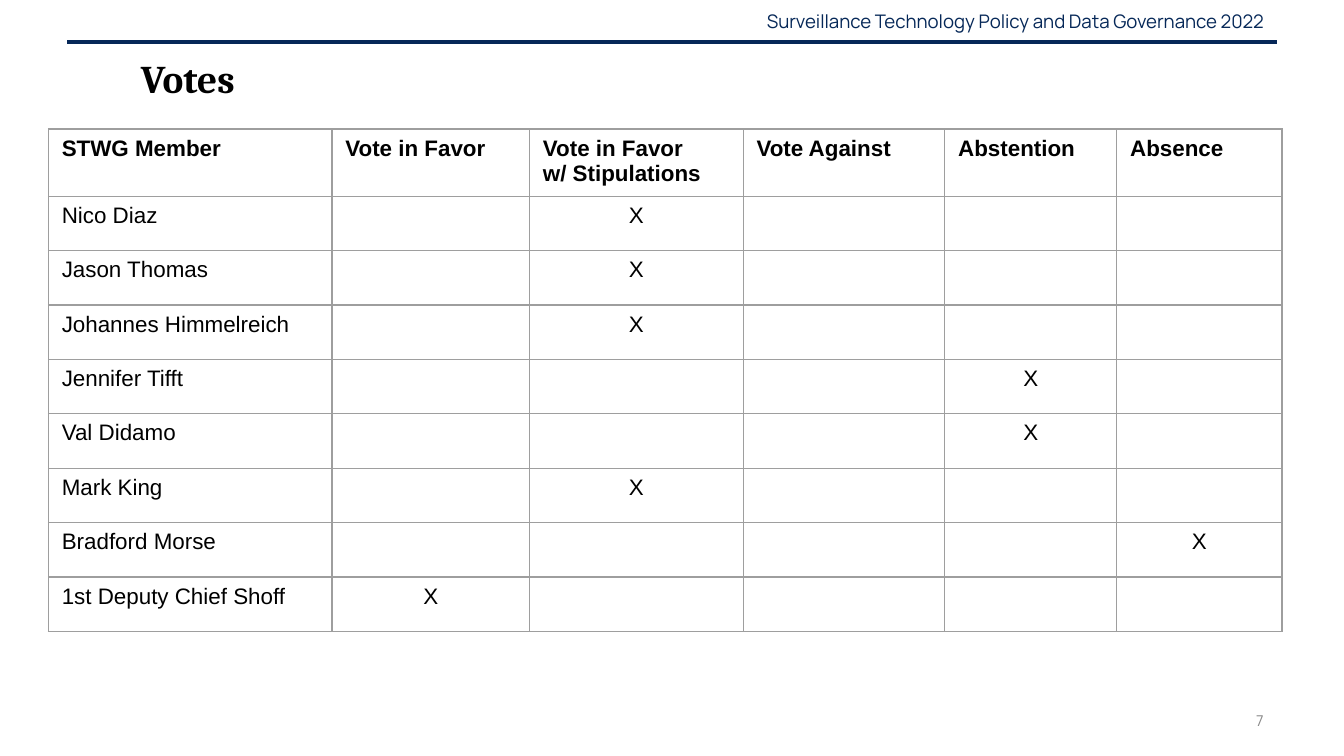
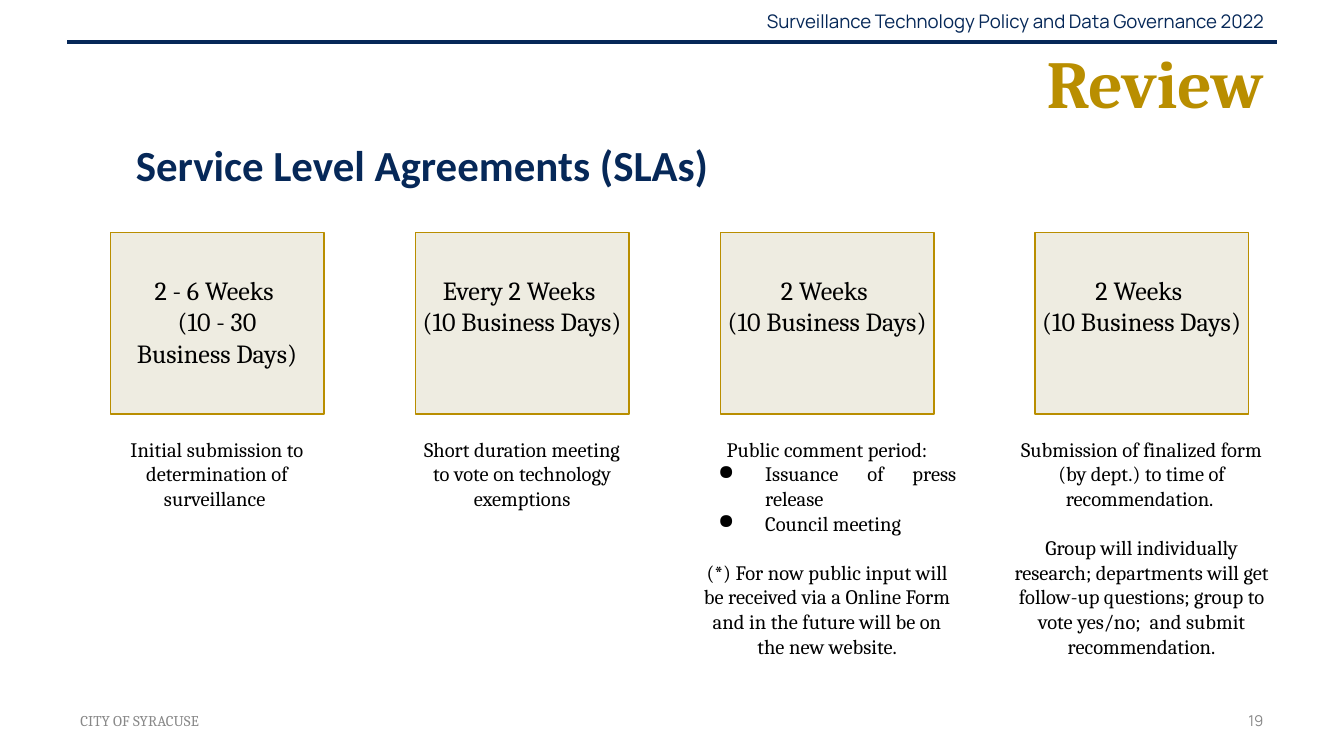
from dataclasses import dataclass
from typing import Optional, Sequence, Union

from lxml.etree import SubElement
from pptx import Presentation
from pptx.dml.color import RGBColor
from pptx.enum.shapes import MSO_CONNECTOR, MSO_SHAPE
from pptx.enum.text import MSO_ANCHOR, PP_ALIGN
from pptx.oxml import parse_xml
from pptx.oxml.ns import nsdecls, qn
from pptx.slide import Slide
from pptx.table import _Cell
from pptx.text.text import TextFrame, _Paragraph
from pptx.util import Inches, Length, Pt


@dataclass(frozen=True)
class Theme:
    navy: str = "062858"
    gold: str = "B98E00"
    cream: str = "EEECE1"
    black: str = "000000"
    gray: str = "888888"
    grid: str = "9E9E9E"
    serif: str = "Cambria"
    sans: str = "Calibri"
    band_font: str = "Manrope"
    table_font: str = "Arial"
    title_size: float = 36
    subtitle_size: float = 23
    heading_size: float = 21
    duration_size: float = 14
    table_size: float = 12
    caption_size: float = 11
    band_size: float = 10
    footer_size: float = 8
    rule_width: float = 2.25
    thin_width: float = 0.75


@dataclass(frozen=True)
class Area:
    left: float
    top: float
    width: float
    height: float

    def lengths(self) -> tuple[Length, ...]:
        return tuple(Inches(value) for value in (self.left, self.top, self.width, self.height))


@dataclass(frozen=True)
class Line:
    """A paragraph that is bulleted or set apart from the one above."""
    text: str
    bullet: bool = False
    space_before: float = 0


@dataclass(frozen=True)
class Member:
    name: str
    vote: str


@dataclass(frozen=True)
class Stage:
    left: float
    duration: Sequence[str]
    caption: Sequence[Union[str, Line]]
    caption_area: tuple[float, float]


THEME = Theme()
STAGE_SIZE = (1.59, 1.35)
NARROW, WIDE = (1.72, 0.76), (2.12, 1.87)
TEN_DAYS = "(10 Business Days)"
FAVOR, STIPULATIONS = "Vote in Favor", "Vote in Favor \vw/ Stipulations"
AGAINST, ABSTENTION, ABSENCE = "Vote Against", "Abstention", "Absence"

COLUMNS = {
    "STWG Member": 2.11,
    FAVOR: 1.47,
    STIPULATIONS: 1.59,
    AGAINST: 1.5,
    ABSTENTION: 1.28,
    ABSENCE: 1.23,
}

MEMBERS = (
    Member("Nico Diaz", STIPULATIONS),
    Member("Jason Thomas", STIPULATIONS),
    Member("Johannes Himmelreich", STIPULATIONS),
    Member("Jennifer Tifft", ABSTENTION),
    Member("Val Didamo", ABSTENTION),
    Member("Mark King ", STIPULATIONS),
    Member("Bradford Morse", ABSENCE),
    Member("1st Deputy Chief Shoff", FAVOR),
)

STAGES = (
    Stage(0.82, ("2 - 6 Weeks ", "(10 - 30", "Business Days)"),
          ("Initial submission to determination of surveillance ",), NARROW),
    Stage(3.09, ("Every 2 Weeks ", TEN_DAYS),
          ("Short duration meeting to vote on technology exemptions",), NARROW),
    Stage(5.36, ("2 Weeks ", TEN_DAYS),
          ("Public comment period:",
           Line("Issuance of press release ", bullet=True),
           Line("Council meeting", bullet=True),
           Line("(*) For now public input will be received via a Online Form and "
                "in the future will be on the new website.", space_before=13)), WIDE),
    Stage(7.7, ("2 Weeks ", TEN_DAYS),
          ("Submission of finalized form (by dept.) to time of recommendation. ",
           Line("Group will individually research; departments will get follow-up "
                "questions; group to vote yes/no;  and submit recommendation.",
                space_before=13)), WIDE),
)


def add_bullet(para: _Paragraph, size: float, color: str) -> None:
    para.alignment = PP_ALIGN.JUSTIFY
    properties = para._p.get_or_add_pPr()
    properties.set("marL", str(Inches(0.5)))
    properties.set("indent", str(Inches(-0.35)))
    SubElement(SubElement(properties, qn("a:buClr")), qn("a:srgbClr")).set("val", color)
    SubElement(properties, qn("a:buSzPts")).set("val", str(round(size * 100)))
    SubElement(properties, qn("a:buChar")).set("char", "●")


def write_text(frame: TextFrame, lines: Sequence[Union[str, Line]], *, font: str,
               size: float, color: str = THEME.black, bold: bool = False,
               align: PP_ALIGN = PP_ALIGN.LEFT, space_before: float = 0,
               line_spacing: Optional[float] = None) -> None:
    for index, item in enumerate(lines):
        line = item if isinstance(item, Line) else Line(item, space_before=space_before)
        para = frame.add_paragraph() if index else frame.paragraphs[0]
        para.text = line.text
        para.alignment = align
        para.space_before = Pt(line.space_before)
        if line_spacing:
            para.line_spacing = line_spacing
        if line.bullet:
            add_bullet(para, size, color)
        for line_break in para._p.findall(qn("a:br")):
            SubElement(line_break, qn("a:rPr")).set("sz", str(round(size * 100)))
        for span in para.runs:
            span.font.name = font
            span.font.size = Pt(size)
            span.font.bold = bold
            span.font.color.rgb = RGBColor.from_string(color)


def add_text_box(page: Slide, area: Area, *lines: Union[str, Line],
                 anchor: MSO_ANCHOR = MSO_ANCHOR.TOP, inset: float = 0.05,
                 **text_format) -> None:
    """Place wrapped text; inset is the margin above and below it."""
    frame = page.shapes.add_textbox(*area.lengths()).text_frame
    frame.word_wrap = True
    frame.vertical_anchor = anchor
    frame.margin_left = frame.margin_right = Inches(0.1)
    frame.margin_top = frame.margin_bottom = Inches(inset)
    write_text(frame, lines, **text_format)


def add_page(deck: Presentation, number: int) -> Slide:
    """Add a page with the header band and its page number."""
    page = deck.slides.add_slide(deck.slide_layouts[6])
    add_text_box(page, Area(5.21, 0.01, 4.29, 0.3),
                 "Surveillance Technology Policy and Data Governance 2022",
                 anchor=MSO_ANCHOR.MIDDLE, font=THEME.band_font, size=THEME.band_size,
                 color=THEME.navy, align=PP_ALIGN.RIGHT)
    add_text_box(page, Area(7.17, 5.21, 2.33, 0.3), str(number),
                 anchor=MSO_ANCHOR.MIDDLE, font=THEME.band_font, size=THEME.footer_size,
                 color=THEME.gray, align=PP_ALIGN.RIGHT)
    rule = page.shapes.add_connector(MSO_CONNECTOR.STRAIGHT, Inches(0.5), Inches(0.31),
                                     Inches(9.5), Inches(0.31))
    rule.line.color.rgb = RGBColor.from_string(THEME.navy)
    rule.line.width = Pt(THEME.rule_width)
    SubElement(rule._element.spPr, qn("a:effectLst"))
    return page


def style_cell(cell: _Cell) -> None:
    """Clear the fill and draw a thin border on every side."""
    cell.fill.background()
    properties = cell._tc.get_or_add_tcPr()
    for index, side in enumerate(("lnL", "lnR", "lnT", "lnB")):
        properties.insert(index, parse_xml(
            f'<a:{side} {nsdecls("a")} w="{Pt(THEME.thin_width)}"><a:solidFill>'
            f'<a:srgbClr val="{THEME.grid}"/></a:solidFill></a:{side}>'))


def add_vote_table(page: Slide) -> None:
    header_height, body_height = 0.48, 3.24
    area = Area(0.36, 0.96, sum(COLUMNS.values()), header_height + body_height)
    table = page.shapes.add_table(len(MEMBERS) + 1, len(COLUMNS), *area.lengths()).table
    table.first_row = table.horz_banding = False
    for column, width in zip(table.columns, COLUMNS.values()):
        column.width = Inches(width)
    for index, row in enumerate(table.rows):
        row.height = Inches(body_height / len(MEMBERS) if index else header_height)
    rows = [list(COLUMNS)] + [
        [member.name] + ["X" if vote == member.vote else "" for vote in list(COLUMNS)[1:]]
        for member in MEMBERS]
    for row_index, texts in enumerate(rows):
        for column_index, text in enumerate(texts):
            cell = table.cell(row_index, column_index)
            style_cell(cell)
            is_mark = row_index > 0 and column_index > 0
            write_text(cell.text_frame, [text], font=THEME.table_font,
                       size=THEME.table_size, bold=row_index == 0,
                       align=PP_ALIGN.CENTER if is_mark else PP_ALIGN.LEFT)


def add_stage(page: Slide, stage: Stage) -> None:
    width, height = STAGE_SIZE
    center = stage.left + width / 2
    box = page.shapes.add_shape(MSO_SHAPE.RECTANGLE,
                                *Area(stage.left, 1.73, width, height).lengths())
    box.shadow.inherit = False
    box.fill.solid()
    box.fill.fore_color.rgb = RGBColor.from_string(THEME.cream)
    box.line.color.rgb = RGBColor.from_string(THEME.gold)
    box.line.width = Pt(THEME.thin_width)
    duration_height = 0.2 + 0.24 * len(stage.duration)
    add_text_box(page, Area(center - NARROW[0] / 2, 1.94, NARROW[0], duration_height),
                 *stage.duration, inset=0.1, font=THEME.serif, size=THEME.duration_size,
                 align=PP_ALIGN.CENTER)
    caption_width, caption_height = stage.caption_area
    add_text_box(page, Area(center - caption_width / 2, 3.15, caption_width, caption_height),
                 *stage.caption, inset=0.1, font=THEME.serif, size=THEME.caption_size,
                 align=PP_ALIGN.CENTER)


def build_votes(deck: Presentation) -> None:
    page = add_page(deck, 7)
    add_text_box(page, Area(0.95, 0.3, 1.44, 0.88), "Votes", font=THEME.serif,
                 size=THEME.heading_size, bold=True, space_before=12, line_spacing=1.15)
    add_vote_table(page)


def build_review(deck: Presentation) -> None:
    page = add_page(deck, 19)
    add_text_box(page, Area(0.5, 5.21, 2.33, 0.3), "CITY OF SYRACUSE",
                 anchor=MSO_ANCHOR.MIDDLE, font=THEME.serif, size=THEME.footer_size,
                 color=THEME.gray)
    add_text_box(page, Area(0.73, 0.93, 4.83, 0.67), "Service Level Agreements (SLAs)",
                 inset=0.1, font=THEME.sans, size=THEME.subtitle_size, color=THEME.navy,
                 bold=True, align=PP_ALIGN.CENTER)
    add_text_box(page, Area(0.96, 0.29, 8.54, 0.64), "Review", anchor=MSO_ANCHOR.MIDDLE,
                 font=THEME.serif, size=THEME.title_size, color=THEME.gold, bold=True,
                 align=PP_ALIGN.RIGHT)
    for stage in STAGES:
        add_stage(page, stage)


def main() -> None:
    deck = Presentation()
    deck.slide_width = Inches(10)
    deck.slide_height = deck.slide_width * 9 // 16
    build_votes(deck)
    build_review(deck)
    deck.save("out.pptx")


if __name__ == "__main__":
    main()
